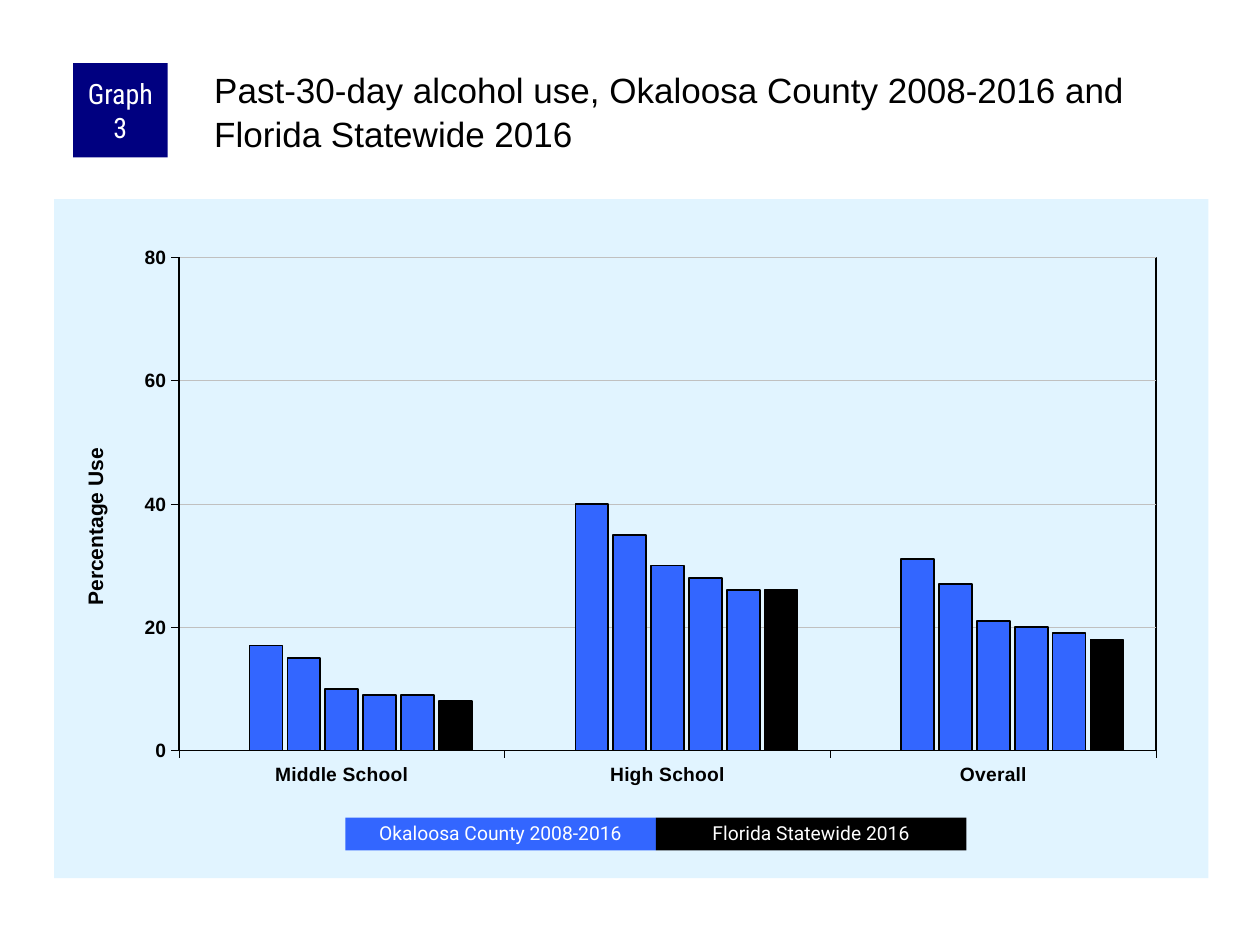
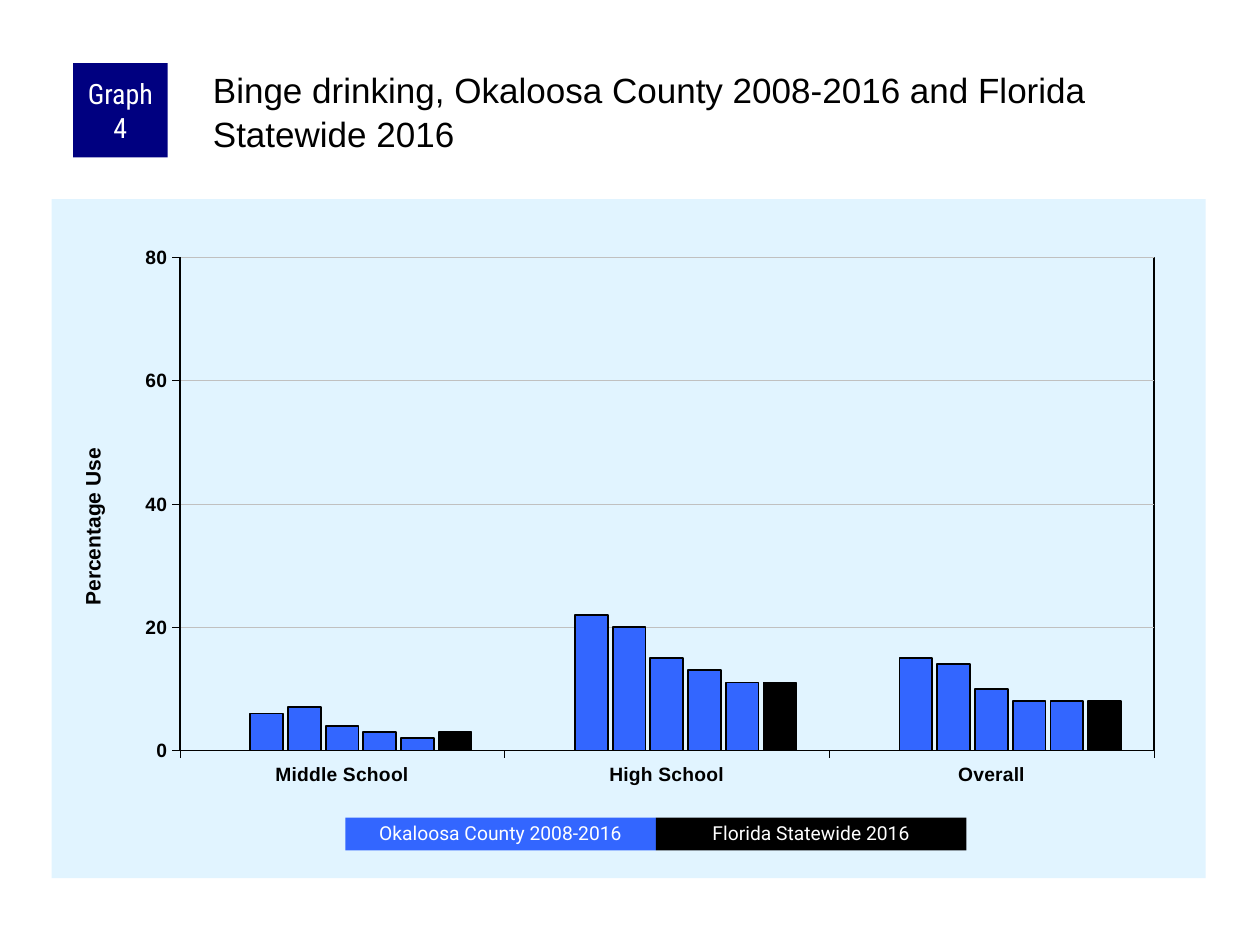
from dataclasses import dataclass
from typing import Any

from lxml import etree
from pptx import Presentation
from pptx import util as u
from pptx.chart.data import CategoryChartData
from pptx.dml.color import RGBColor
from pptx.enum import chart as ch
from pptx.enum import shapes, text
from pptx.oxml import parse_xml
from pptx.oxml.ns import nsdecls, qn

Pt = u.Pt
NAVY, BLUE, BLACK, WHITE = "000080", "3366FF", "000000", "FFFFFF"
PANEL, GRID = "E1F4FF", "C0C0C0"
CATEGORIES = ("Middle School", "High School", "Overall")
CHART_TOP, CHART_W, CHART_H = 113.76, 659.52, 388.08


@dataclass(frozen=True)
class Box:
    label: str
    left: float
    top: float
    width: float
    height: float
    fill: str
    font: str
    size: float
    spacing: float = 1.0
    inset_x: float = 7.2
    inset_y: float = 3.6


@dataclass(frozen=True)
class Graph:
    number: int
    title: str
    title_left: float
    chart_left: float
    plot_x: float
    plot_w: float
    values: tuple[tuple[int, int, int], ...]


LEGEND = (
    Box("Okaloosa County 2008-2016", 197.28, 467.28, 177.48, 18.72, BLUE, "Roboto", 11, 0.9),
    Box("Florida Statewide 2016", 374.76, 467.28, 177.48, 18.72, BLACK, "Roboto", 11, 0.9),
)

GRAPHS = (
    Graph(3, "Past-30-day alcohol use, Okaloosa County 2008-2016 and Florida Statewide 2016",
          120.24, 30.96, 0.108, 0.847,
          ((0, 0, 0), (17, 40, 31), (15, 35, 27), (10, 30, 21),
           (9, 28, 20), (9, 26, 19), (8, 26, 18))),
    Graph(4, "Binge drinking, Okaloosa County 2008-2016 and Florida Statewide 2016",
          119.52, 29.52, 0.111, 0.844,
          ((0, 0, 0), (6, 22, 15), (7, 20, 14), (4, 15, 10),
           (3, 13, 8), (2, 11, 8), (3, 11, 8))),
)


def rgb(color: str) -> RGBColor:
    return RGBColor.from_string(color)


def apply(obj: Any, **fmt: Any) -> None:
    for name, value in fmt.items():
        setattr(obj, name, value)


def set_font(font: Any, name: str, size: float, color: str, bold: bool = False) -> None:
    apply(font, name=name, size=Pt(size), bold=bold)
    font.color.rgb = rgb(color)


def set_fill(fill: Any, color: str) -> None:
    fill.solid()
    fill.fore_color.rgb = rgb(color)


def set_line(line: Any, color: str, width: float) -> None:
    line.color.rgb = rgb(color)
    line.width = Pt(width)


def set_layout(parent: Any, index: int, **pos: float) -> None:
    for old in parent.findall(qn("c:layout")):
        parent.remove(old)
    layout = etree.Element(qn("c:layout"))
    manual = etree.SubElement(layout, qn("c:manualLayout"))
    modes = {"xMode": "edge", "yMode": "edge"}
    if "w" in pos:
        modes = {"layoutTarget": "inner", **modes}
    for tag, value in {**modes, **pos}.items():
        etree.SubElement(manual, qn(f"c:{tag}")).set("val", str(value))
    parent.insert(index, layout)


def chart_sppr(fill: str, line: str) -> Any:
    return parse_xml(f'<c:spPr {nsdecls("c", "a")}>{fill}<a:ln w="12700">{line}</a:ln></c:spPr>')


def solid(color: str) -> str:
    return f'<a:solidFill><a:srgbClr val="{color}"/></a:solidFill>'


def add_box(s: Any, box: Box) -> None:
    sp = s.shapes.add_shape(shapes.MSO_SHAPE.RECTANGLE, Pt(box.left), Pt(box.top),
                            Pt(box.width), Pt(box.height))
    sp.shadow.inherit = False
    set_fill(sp.fill, box.fill)
    sp.line.fill.background()
    tf = sp.text_frame
    apply(tf, word_wrap=True, vertical_anchor=text.MSO_ANCHOR.MIDDLE,
          margin_left=Pt(box.inset_x), margin_right=Pt(box.inset_x),
          margin_top=Pt(box.inset_y), margin_bottom=Pt(box.inset_y))
    p = tf.paragraphs[0]
    apply(p, alignment=text.PP_ALIGN.CENTER, line_spacing=box.spacing)
    r = p.add_run()
    r.text = box.label
    set_font(r.font, box.font, box.size, WHITE)


def set_title(s: Any, graph: Graph) -> None:
    sp = s.shapes.title
    apply(sp, left=Pt(graph.title_left), top=Pt(36), width=Pt(570.24), height=Pt(59.76))
    tf = sp.text_frame
    apply(tf, word_wrap=True, auto_size=text.MSO_AUTO_SIZE.NONE,
          vertical_anchor=text.MSO_ANCHOR.TOP, margin_left=Pt(2.16),
          margin_top=Pt(2.16), margin_right=0, margin_bottom=0)
    p = tf.paragraphs[0]
    apply(p, alignment=text.PP_ALIGN.LEFT, line_spacing=1.05)
    r = p.add_run()
    r.text = graph.title
    set_font(r.font, "Arial", 20, BLACK)


def add_axis_title(axis: Any) -> None:
    axis.has_title = True
    tf = axis.axis_title.text_frame
    tf.text = "Percentage Use"
    set_font(tf.paragraphs[0].runs[0].font, "Arial", 12, BLACK, True)
    title = axis.axis_title._element
    body = next(title.iter(qn("a:bodyPr")))
    body.set("rot", "-5400000")
    body.set("vert", "horz")
    set_layout(title, 1, x=0.021, y=0.361)


def add_usage_chart(s: Any, graph: Graph) -> None:
    data = CategoryChartData()
    data.categories = CATEGORIES
    for i, values in enumerate(graph.values, 1):
        data.add_series(f"Series {i}", values)
    chart = s.shapes.add_chart(ch.XL_CHART_TYPE.COLUMN_CLUSTERED, Pt(graph.chart_left),
                               Pt(CHART_TOP), Pt(CHART_W), Pt(CHART_H), data).chart
    apply(chart, has_legend=False, has_title=False)
    set_font(chart.font, "Arial", 8, BLACK)

    plot = chart.plots[0]
    apply(plot, gap_width=200, overlap=-15, vary_by_categories=False)
    for i, series in enumerate(plot.series, 1):
        set_fill(series.format.fill, BLACK if i == len(graph.values) else BLUE)
        set_line(series.format.line, BLACK, 1)

    for axis in (chart.category_axis, chart.value_axis):
        apply(axis, major_tick_mark=ch.XL_TICK_MARK.OUTSIDE,
              minor_tick_mark=ch.XL_TICK_MARK.NONE)
        set_font(axis.tick_labels.font, "Arial", 11, BLACK, True)
        set_line(axis.format.line, BLACK, 0.25)
    axis = chart.value_axis
    apply(axis, minimum_scale=0, maximum_scale=80, major_unit=20, has_major_gridlines=True)
    set_line(axis.major_gridlines.format.line, GRID, 0.25)
    add_axis_title(axis)

    space = chart._chartSpace
    area = next(space.iter(qn("c:plotArea")))
    set_layout(area, 0, x=graph.plot_x, y=0.086, w=graph.plot_w, h=0.726)
    area.append(chart_sppr("<a:noFill/>", solid(BLACK)))
    space.find(qn("c:chart")).addnext(chart_sppr(solid(PANEL), "<a:noFill/>"))


def build_slide(prs: Any, graph: Graph) -> None:
    s = prs.slides.add_slide(prs.slide_layouts[5])
    set_title(s, graph)
    add_usage_chart(s, graph)
    badge = Box(f"Graph {graph.number}", 41.76, 36, 54, 54, NAVY,
                "Roboto Condensed", 16, inset_x=3.6, inset_y=0)
    for box in (badge, *LEGEND):
        add_box(s, box)


def main() -> None:
    prs = Presentation()
    apply(prs, slide_width=Pt(720), slide_height=Pt(540))
    for graph in GRAPHS:
        build_slide(prs, graph)
    prs.save("out.pptx")


if __name__ == "__main__":
    main()
